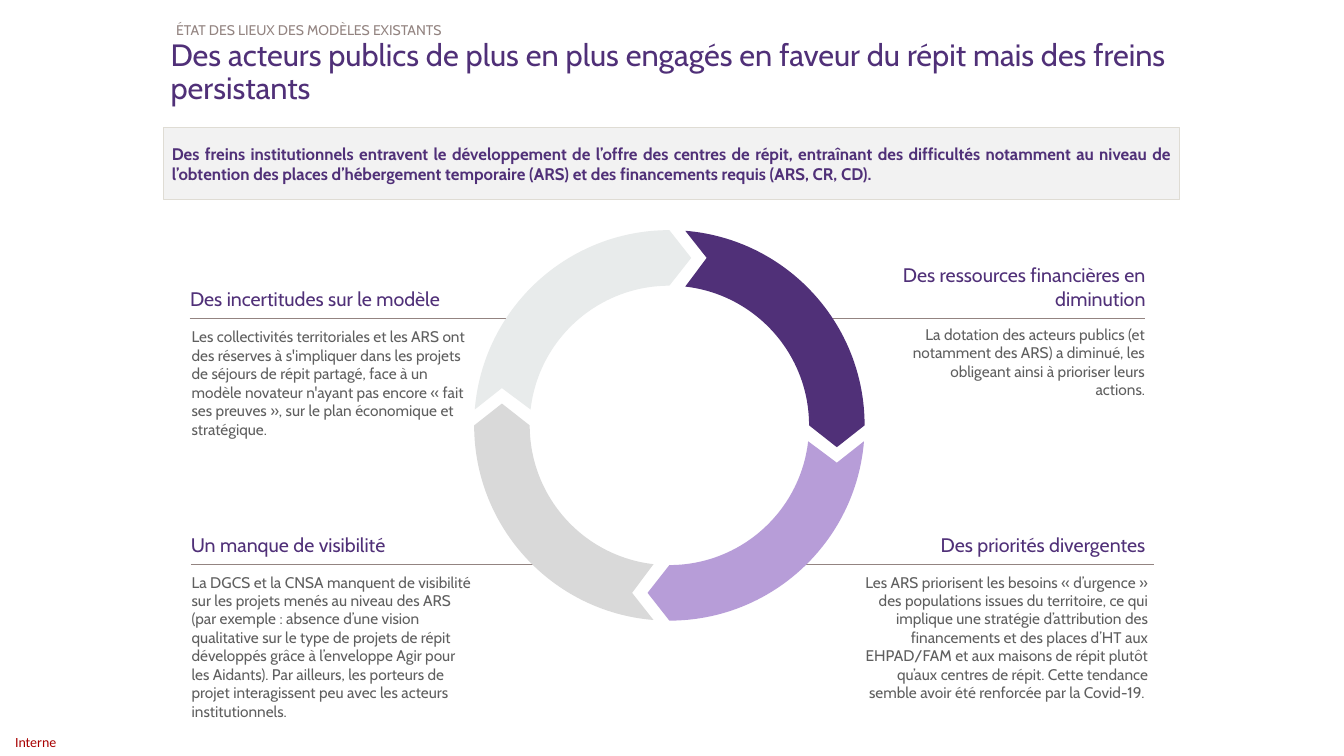
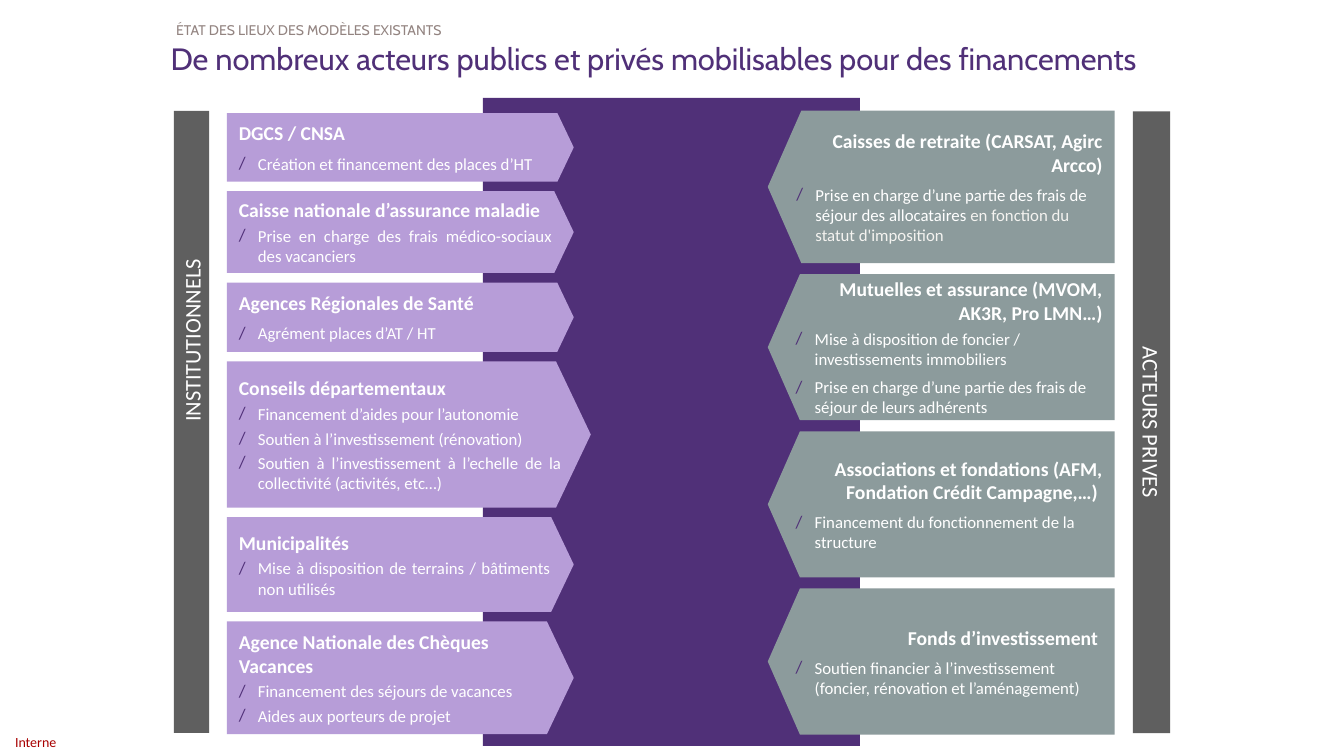
from math import asin, cos, pi, sin, tan

from lxml.etree import SubElement
from pptx import Presentation
from pptx.dml.color import RGBColor
from pptx.enum.shapes import MSO_CONNECTOR, MSO_SHAPE
from pptx.enum.text import MSO_ANCHOR, PP_ALIGN
from pptx.oxml.ns import qn
from pptx.util import Cm, Pt

PURPLE, LAVENDER, GREY, LIGHT, PALE = "503078", "B79DD8", "D9D9D9", "E8EBEB", "F2F2F2"
TEXT, TAUPE, SAGE, WHITE, RED = "5F5F5F", "938481", "8C9B9C", "FFFFFF", "A80000"
LEFT, RIGHT, JUSTIFY, CENTER = PP_ALIGN.LEFT, PP_ALIGN.RIGHT, PP_ALIGN.JUSTIFY, PP_ALIGN.CENTER
TOP, MIDDLE, BOTTOM = MSO_ANCHOR.TOP, MSO_ANCHOR.MIDDLE, MSO_ANCHOR.BOTTOM


def color(hex_string):
    return RGBColor.from_string(hex_string)


def style(font, size, fill, name="Cabin", bold=False):
    font.size, font.name, font.bold = Pt(size), name, bold
    font.color.rgb = color(fill)


def set_frame(tf, anchor, insets):
    tf.word_wrap = True
    tf.vertical_anchor = anchor
    tf.margin_left, tf.margin_top, tf.margin_right, tf.margin_bottom = map(Cm, insets)


def write(tf, text, size, fill, align=LEFT, name="Cabin", bold=False):
    p = tf.paragraphs[0]
    p.text = text
    p.alignment = align
    style(p.runs[0].font, size, fill, name, bold)
    return p


def add_text(s, box, text, size, fill, align=LEFT, anchor=TOP, insets=(0, 0, 0, 0), name="Cabin"):
    tf = s.shapes.add_textbox(*map(Cm, box)).text_frame
    set_frame(tf, anchor, insets)
    return write(tf, text, size, fill, align, name)


def paint(sp, fill, line=None):
    sp.shadow.inherit = False
    sp.fill.solid()
    sp.fill.fore_color.rgb = color(fill)
    if line:
        sp.line.color.rgb = color(line)
        sp.line.width = Pt(0.75)
    else:
        sp.line.fill.background()


def add_box(s, kind, box, fill, line=None):
    sp = s.shapes.add_shape(kind, *map(Cm, box))
    paint(sp, fill, line)
    return sp


def add_rule(s, x1, x2, y):
    ln = s.shapes.add_connector(MSO_CONNECTOR.STRAIGHT, Cm(x1), Cm(y), Cm(x2), Cm(y))
    ln.line.color.rgb = color(TAUPE)
    ln.line.width = Pt(0.75)
    SubElement(ln.element.spPr, qn("a:effectLst"))


def new_slide(prs, title, title_y, title_w):
    """Blank slide with section label, title and confidentiality mark."""
    s = prs.slides.add_slide(prs.slide_layouts[6])
    add_text(s, (0, 18.33, 1.8, 0.74), "Interne", 10, RED, anchor=MIDDLE,
             insets=(0.38, 0, 0, 0), name="Calibri")
    p = add_text(s, (4, title_y, title_w, 1.35), title, 22, PURPLE,
                 anchor=MIDDLE, insets=(0.3, 0, 0.3, 0))
    p.line_spacing = 0.9
    add_text(s, (4.14, 0.25, 17, 0.71), "ÉTAT DES LIEUX DES MODÈLES EXISTANTS",
             10, TAUPE, JUSTIFY, BOTTOM, (0.3, 0, 0.3, 0))
    return s


# Slide 1: obstacles around a ring
def add_obstacle(s, rule, head, body, align, title, text):
    """Heading (x, width) above a rule (x1, x2, y), body (x, y, width) below."""
    head_h = 1.3
    add_text(s, (head[0], rule[2] - head_h, head[1], head_h), title, 14, PURPLE,
             align, BOTTOM, (0, 0, 0, 0.2))
    add_rule(s, *rule)
    add_text(s, (*body, 4.1), text, 11, TEXT, align, insets=(0, 0.2, 0, 0))


def polar(radius, angle):
    return radius * cos(angle), radius * sin(angle)


def arc_controls(radius, start, end):
    """Bezier control points of a circular arc around (0, 0)."""
    k = 4 / 3 * tan((end - start) / 4)
    (x1, y1), (x2, y2) = polar(radius, start), polar(radius, end)
    return [(x1 - k * y1, y1 + k * x1), (x2 + k * y2, y2 - k * x2)]


def bend(sp, segment, controls):
    """Turn a straight segment of a freeform into a Bezier curve."""
    curve = segment.makeelement(qn("a:cubicBezTo"))
    for x, y in controls:
        SubElement(curve, qn("a:pt"), x=str(x - sp.left), y=str(y - sp.top))
    curve.append(segment[0])
    segment.getparent().replace(segment, curve)


def add_ring(s, cx, cy, outer, inner, fills):
    """Four curved arrows, clockwise from the upper right quarter."""
    gap, tip, notch = 0.4, 0.55, 0.94
    mid = (outer + inner) / 2
    in_start, out_end = (asin(gap / r) - pi / 2 for r in (inner, outer))
    corners = [polar(inner, in_start), (inner, 0), (mid, tip), (outer, 0),
               polar(outer, out_end), (notch, -mid)]
    inner_curve = arc_controls(inner, in_start, 0)
    outer_curve = arc_controls(outer, 0, out_end)
    for i, fill in enumerate(fills):
        c, d = cos(i * pi / 2), sin(i * pi / 2)

        def place(points):
            return [(Cm(cx + x * c - y * d), Cm(cy + x * d + y * c)) for x, y in points]

        start, *others = place(corners)
        builder = s.shapes.build_freeform(*start, scale=1.0)
        builder.add_line_segments(others, close=True)
        sp = builder.convert_to_shape()
        segments = list(sp.element.iter(qn("a:lnTo")))
        bend(sp, segments[0], place(inner_curve))
        bend(sp, segments[3], place(outer_curve))
        paint(sp, fill)


OBSTACLES = [
    ((4.78, 12.78, 8.02), (4.79, 7.65), (4.83, 8.05, 7.04), LEFT,
     "Des incertitudes sur le modèle",
     "Les collectivités territoriales et les ARS ont des réserves à s'impliquer dans les projets "
     "de séjours de répit partagé, face à un modèle novateur n'ayant pas encore « fait ses "
     "preuves », sur le plan économique et stratégique."),
    ((20.98, 28.85, 8.02), (21.83, 7.04), (22.69, 7.99, 6.17), RIGHT,
     "Des ressources financières en diminution",
     "La dotation des acteurs publics (et notamment des ARS) a diminué, les obligeant ainsi à "
     "prioriser leurs actions."),
    ((4.81, 13.61, 14.23), (4.81, 7.26), (4.83, 14.23, 7.14), LEFT,
     "Un manque de visibilité",
     "La DGCS et la CNSA manquent de visibilité sur les projets menés au niveau des ARS (par "
     "exemple : absence d’une vision qualitative sur le type de projets de répit développés grâce "
     "à l’enveloppe Agir pour les Aidants). Par ailleurs, les porteurs de projet interagissent "
     "peu avec les acteurs institutionnels."),
    ((20.27, 29.08, 14.23), (21.83, 7.04), (21.78, 14.23, 7.16), RIGHT,
     "Des priorités divergentes",
     "Les ARS priorisent les besoins « d’urgence » des populations issues du territoire, ce qui "
     "implique une stratégie d’attribution des financements et des places d’HT aux EHPAD/FAM et "
     "aux maisons de répit plutôt qu’aux centres de répit. Cette tendance semble avoir été "
     "renforcée par la Covid-19. "),
]


def obstacles_slide(prs):
    s = new_slide(prs, "Des acteurs publics de plus en plus engagés en faveur du répit "
                  "mais des freins persistants", 1.17, 25.88)
    for obstacle in OBSTACLES:
        add_obstacle(s, *obstacle)
    add_ring(s, 16.87, 10.72, 4.92, 3.52, (PURPLE, LAVENDER, GREY, LIGHT))
    # Key message
    sp = add_box(s, MSO_SHAPE.RECTANGLE, (4.13, 3.21, 25.6, 1.83), PALE, "DFDCD4")
    set_frame(sp.text_frame, MIDDLE, (0.2, 0.15, 0.2, 0.15))
    write(sp.text_frame, "Des freins institutionnels entravent le développement de l’offre des "
          "centres de répit, entraînant des difficultés notamment au niveau de l’obtention des "
          "places d’hébergement temporaire (ARS) et des financements requis (ARS, CR, CD). ",
          12, PURPLE, JUSTIFY, bold=True)


# Slide 2: funders on both sides of a central panel
def add_bullet(tf, align, before, text, tail=""):
    p = tf.add_paragraph()
    pPr = p._p.get_or_add_pPr()
    pPr.set("marL", str(Cm(0.48)))
    pPr.set("indent", str(-Cm(0.48)))
    p.level, p.alignment = 1, align
    p.space_before, p.space_after = Pt(before), Pt(3)
    SubElement(SubElement(pPr, qn("a:buClr")), qn("a:srgbClr"), val=PURPLE)
    SubElement(pPr, qn("a:buSzPct"), val="105000")
    SubElement(pPr, qn("a:buFont"), typeface="Calibri")
    SubElement(pPr, qn("a:buChar"), char="/")
    for part, fill in ((text, WHITE), (tail, "F4F3F0")):
        if part:
            r = p.add_run()
            r.text = part
            style(r.font, 12, fill, "Calibri")
    return p


def add_card(s, box, title, bullets, private):
    sp = add_box(s, MSO_SHAPE.PENTAGON, box, SAGE if private else LAVENDER)
    sp.adjustments[0] = 0.22 if private else 0.238
    if private:
        sp.element.spPr.get_or_add_xfrm().set("flipH", "1")
    tf = sp.text_frame
    set_frame(tf, MIDDLE, (0.3, 0.3, 0.3, 0.3))
    p = write(tf, title, 14, WHITE, RIGHT if private else LEFT, "Calibri", True)
    p.space_after = Pt(3)
    for bullet in bullets:
        p = add_bullet(tf, LEFT if private else JUSTIFY, *bullet)
    if private:
        p.space_after = Pt(0 if len(bullets) > 1 else 3)


def add_cards(s, x, y, gap, cards, private=False):
    """Stack of cards given as (width, height, title, bullets)."""
    for w, h, title, bullets in cards:
        add_card(s, (x, y, w, h), title, bullets, private)
        y += h + gap


def add_side_bar(s, cx, cy, thickness, rotation, text, left_inset):
    length = 15.67
    sp = add_box(s, MSO_SHAPE.RECTANGLE,
                 (cx - length / 2, cy - thickness / 2, length, thickness), TEXT)
    sp.rotation = rotation
    set_frame(sp.text_frame, MIDDLE, (left_inset, 0.2, 0.3, 0.2))
    write(sp.text_frame, text, 16, WHITE, CENTER, "Calibri")


# Bullets are (space before, text[, paler ending])
PUBLIC = [
    (8.74, 1.73, "DGCS / CNSA", [(3, "Création et financement des places d’HT")]),
    (8.74, 2.06, "Caisse nationale d’assurance maladie",
     [(0, "Prise en charge des frais médico-sociaux des vacanciers")]),
    (8.74, 1.75, "Agences Régionales de Santé", [(3, "Agrément places d’AT / HT")]),
    (9.17, 3.68, "Conseils départementaux",
     [(0, "Financement d’aides pour l’autonomie"),
      (0, "Soutien à l’investissement (rénovation)"),
      (0, "Soutien à l’investissement à l’echelle de la collectivité (activités, etc…)")]),
    (8.74, 2.39, "Municipalités",
     [(0, "Mise à disposition de terrains / bâtiments non utilisés ")]),
    (8.74, 2.84, "Agence Nationale des Chèques Vacances",
     [(0, "Financement des séjours de vacances"), (0, "Aides aux porteurs de projet")]),
]
PRIVATE = [
    (8.74, 3.84, "Caisses de retraite (CARSAT, Agirc Arcco)",
     [(3, "Prise en charge d’une partie des frais de séjour des allocataires ",
       "en fonction du statut d'imposition")]),
    (8.74, 3.68, "Mutuelles et assurance (MVOM, AK3R, Pro LMN…)",
     [(0, "Mise à disposition de foncier / investissements immobiliers"),
      (3, "Prise en charge d’une partie des frais de séjour de leurs adhérents")]),
    (8.74, 3.68, "Associations et fondations (AFM, Fondation Crédit Campagne,…) ",
     [(3, "Financement du fonctionnement de la structure")]),
    (8.74, 3.68, "Fonds d’investissement ",
     [(3, "Soutien financier à l’investissement (foncier, rénovation et l’aménagement)")]),
]


def funders_slide(prs):
    s = new_slide(prs, "De nombreux acteurs publics et privés mobilisables pour des financements",
                  0.84, 26.7)
    add_box(s, MSO_SHAPE.RECTANGLE, (12.17, 2.47, 9.5, 16.33), PURPLE)
    add_side_bar(s, 4.83, 10.63, 0.89, 270, "INSTITUTIONNELS", 4.4)
    add_side_bar(s, 29.02, 10.64, 0.94, 90, "ACTEURS PRIVES", 0.3)
    add_cards(s, 5.72, 2.85, 0.24, PUBLIC)
    add_cards(s, 19.35, 2.79, 0.28, PRIVATE, private=True)


def main():
    prs = Presentation()
    prs.slide_width, prs.slide_height = Cm(33.87), Cm(19.05)
    obstacles_slide(prs)
    funders_slide(prs)
    prs.save("out.pptx")


if __name__ == "__main__":
    main()
